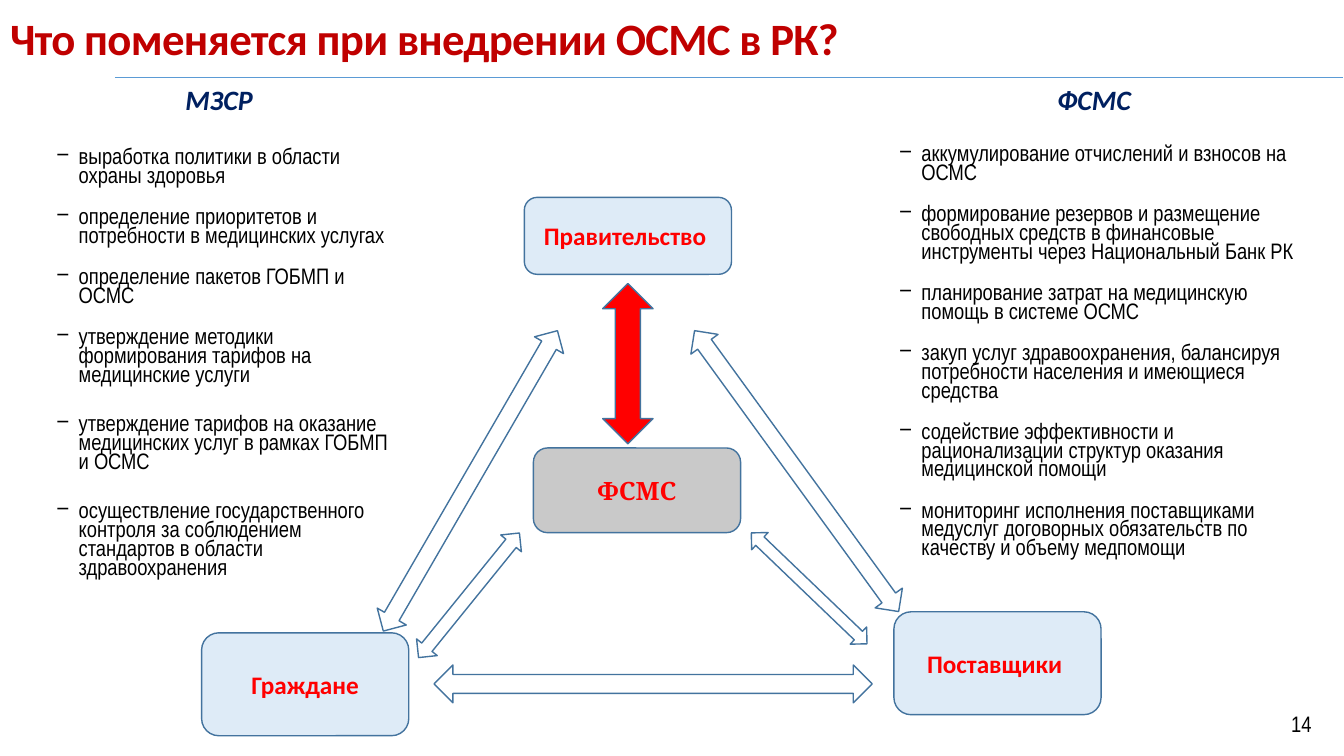
from lxml import etree
from pptx import Presentation
from pptx.dml.color import RGBColor
from pptx.enum.shapes import MSO_CONNECTOR, MSO_SHAPE
from pptx.enum.text import MSO_ANCHOR, MSO_AUTO_SIZE, PP_ALIGN
from pptx.oxml.ns import qn
from pptx.util import Pt

RED, NAVY, PALE, OUTLINE = "FF0000", "002060", "DEEBF7", "43739E"

MINISTRY_TASKS = [
    ("выработка политики в области охраны здоровья", 6),
    ("определение приоритетов и потребности в медицинских услугах", 6),
    ("определение пакетов ГОБМП и ОСМС", 6),
    ("утверждение методики формирования тарифов на медицинские услуги", 12),
    ("утверждение тарифов на оказание медицинских услуг в рамках ГОБМП и ОСМС", 12),
    ("осуществление государственного контроля за соблюдением стандартов "
     "в области здравоохранения", 12),
]
FUND_TASKS = [
    ("аккумулирование отчислений и взносов на ОСМС", 6),
    ("формирование резервов и размещение свободных средств в финансовые "
     "инструменты через Национальный Банк РК", 6),
    ("планирование затрат на медицинскую помощь в системе ОСМС", 6),
    ("закуп услуг здравоохранения, балансируя потребности населения "
     "и имеющиеся средства", 6),
    ("содействие эффективности и рационализации структур оказания "
     "медицинской помощи", 6),
    ("мониторинг исполнения поставщиками медуслуг договорных обязательств "
     "по качеству и объему медпомощи", 12),
]
BOXES = [  # text, place, fill, font
    ("ФСМС", (381, 320, 148, 60.5), "C9C9C9", "Cambria"),
    ("Правительство ", (374.5, 141, 148, 55), PALE, "Calibri"),
    ("Граждане", (144, 452, 148, 73.5), PALE, "Calibri"),
    ("Поставщики ", (638.5, 437, 148, 73.5), PALE, "Calibri"),
]
ARROWS = [  # place before rotation, rotation, fill
    ((430.5, 202.5, 36, 114.5), 0, RED),
    ((324, 219.5, 24, 248), 30.1, "FFFFFF"),
    ((325.5, 368, 19, 114.5), 39, "FFFFFF"),
    ((569.5, 363, 17, 114.5), 313.8, "FFFFFF"),
    ((453, 332, 27, 313), 90, "FFFFFF"),
    ((557, 212.5, 24, 248), 144, "FFFFFF"),
]


def rgb(color):
    return RGBColor.from_string(color)


def place(sp, box):
    sp.left, sp.top, sp.width, sp.height = (Pt(v) for v in box)


def set_frame(sp, anchor):
    tf = sp.text_frame
    tf.word_wrap = True
    tf.auto_size = MSO_AUTO_SIZE.NONE
    tf.vertical_anchor = anchor
    return tf


def add_run(p, text, font, size, color, bold=False, italic=False):
    r = p.add_run()
    r.text = text
    f = r.font
    f.name, f.size, f.bold, f.italic = font, Pt(size), bold, italic
    f.color.rgb = rgb(color)
    return r


def fill_title(sp, text):
    place(sp, (0, 9.5, 786, 35))
    p = set_frame(sp, MSO_ANCHOR.MIDDLE).paragraphs[0]
    p.alignment = PP_ALIGN.LEFT
    r = add_run(p, text, "Calibri", 32, "C00000", bold=True)
    r.font._element.set("spc", "-50")


def fill_heading(sp, text, box):
    place(sp, box)
    p = set_frame(sp, MSO_ANCHOR.TOP).paragraphs[0]
    p.alignment = PP_ALIGN.CENTER
    p.space_before = Pt(10)
    add_run(p, text, "Calibri", 20, NAVY, bold=True, italic=True)


def set_dash(p):
    """Give the paragraph a hanging dash bullet."""
    pPr = p._p.get_or_add_pPr()
    pPr.set("marL", str(Pt(42)))
    pPr.set("indent", str(-Pt(16)))
    etree.SubElement(pPr, qn("a:buChar")).set("char", "−")


def fill_list(sp, items, box):
    place(sp, box)
    tf = set_frame(sp, MSO_ANCHOR.TOP)
    for i, (text, after) in enumerate(items):
        p = tf.add_paragraph() if i else tf.paragraphs[0]
        p.alignment = PP_ALIGN.LEFT
        p.line_spacing = 0.7
        p.space_before, p.space_after = Pt(10), Pt(after)
        set_dash(p)
        add_run(p, text, "Arial Narrow", 16, "000000")


def add_outlined(s, kind, box, fill):
    sp = s.shapes.add_shape(kind, *(Pt(v) for v in box))
    sp.shadow.inherit = False
    sp.fill.solid()
    sp.fill.fore_color.rgb = rgb(fill)
    sp.line.color.rgb = rgb(OUTLINE)
    sp.line.width = Pt(1)
    return sp


def add_box(s, text, box, fill, font):
    sp = add_outlined(s, MSO_SHAPE.ROUNDED_RECTANGLE, box, fill)
    p = set_frame(sp, MSO_ANCHOR.MIDDLE).paragraphs[0]
    p.alignment = PP_ALIGN.CENTER
    add_run(p, text, font, 18, RED, bold=True)


def add_arrow(s, box, rotation, fill):
    add_outlined(s, MSO_SHAPE.UP_DOWN_ARROW, box, fill).rotation = rotation


def add_page_number(s, text):
    sp = s.shapes.add_textbox(Pt(880), Pt(502), Pt(64), Pt(29))
    p = set_frame(sp, MSO_ANCHOR.MIDDLE).paragraphs[0]
    p.alignment = PP_ALIGN.RIGHT
    add_run(p, text, "Arial Narrow", 16, "000000")


def add_rule(s):
    line = s.shapes.add_connector(
        MSO_CONNECTOR.STRAIGHT, Pt(82), Pt(55), Pt(959), Pt(55))
    line.line.color.rgb = rgb("5B9BD5")
    line.line.width = Pt(0.5)
    etree.SubElement(line._element.spPr, qn("a:effectLst"))


def main():
    prs = Presentation()
    prs.slide_width, prs.slide_height = Pt(960), Pt(540)
    s = prs.slides.add_slide(prs.slide_layouts.get_by_name("Comparison"))
    title, left_head, left_list, right_head, right_list = s.placeholders

    fill_title(title, "Что поменяется при внедрении ОСМС в РК?")
    fill_heading(left_head, "МЗСР", (21, 55.5, 271, 32))
    fill_heading(right_head, "ФСМС", (619, 55.5, 325, 32))
    for box in BOXES:
        add_box(s, *box)
    for arrow in ARROWS:
        add_arrow(s, *arrow)
    fill_list(left_list, MINISTRY_TASKS, (7, 103, 286.5, 322.5))
    fill_list(right_list, FUND_TASKS, (609, 101, 328, 336))
    add_page_number(s, "14")
    add_rule(s)
    prs.save("out.pptx")


if __name__ == "__main__":
    main()
